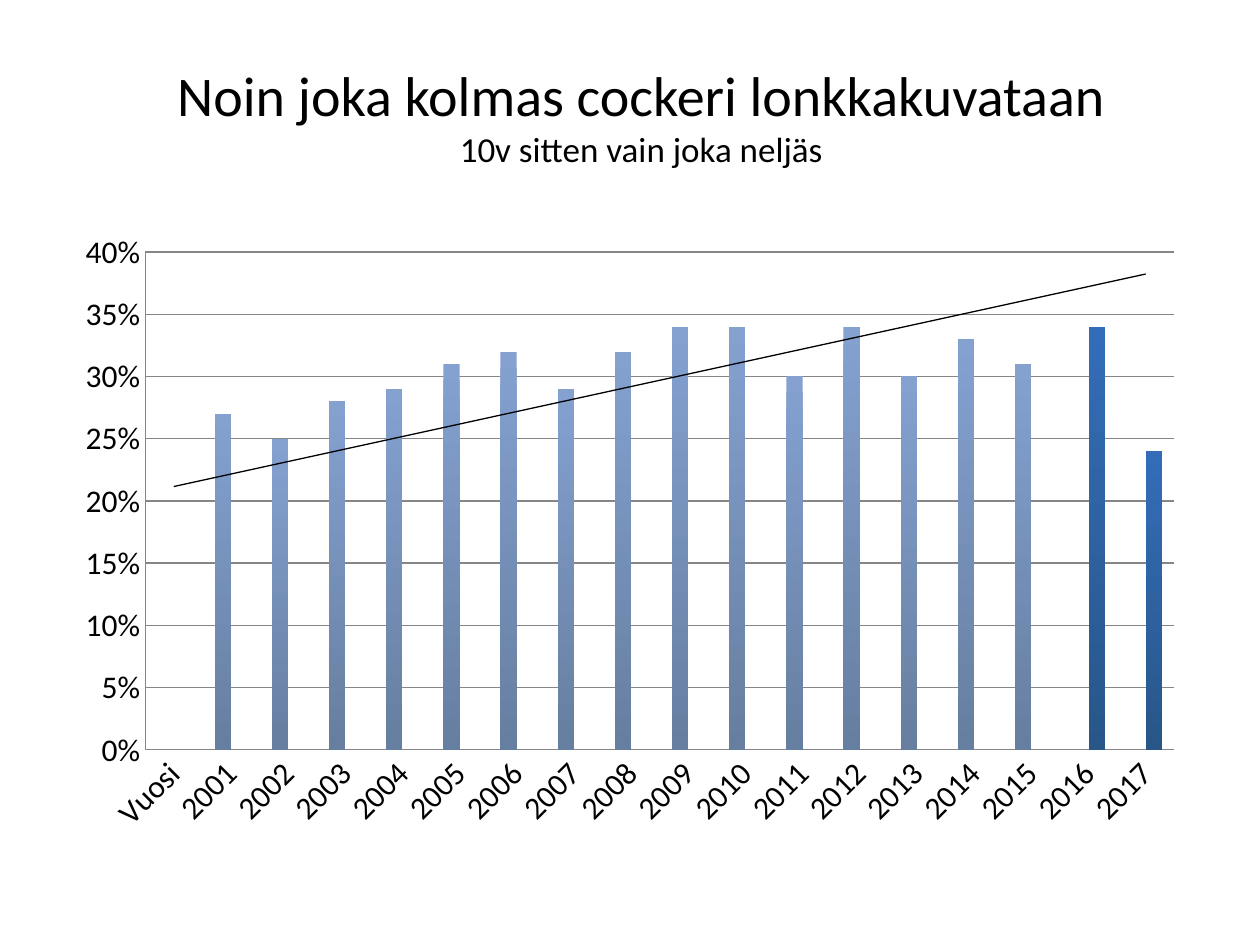
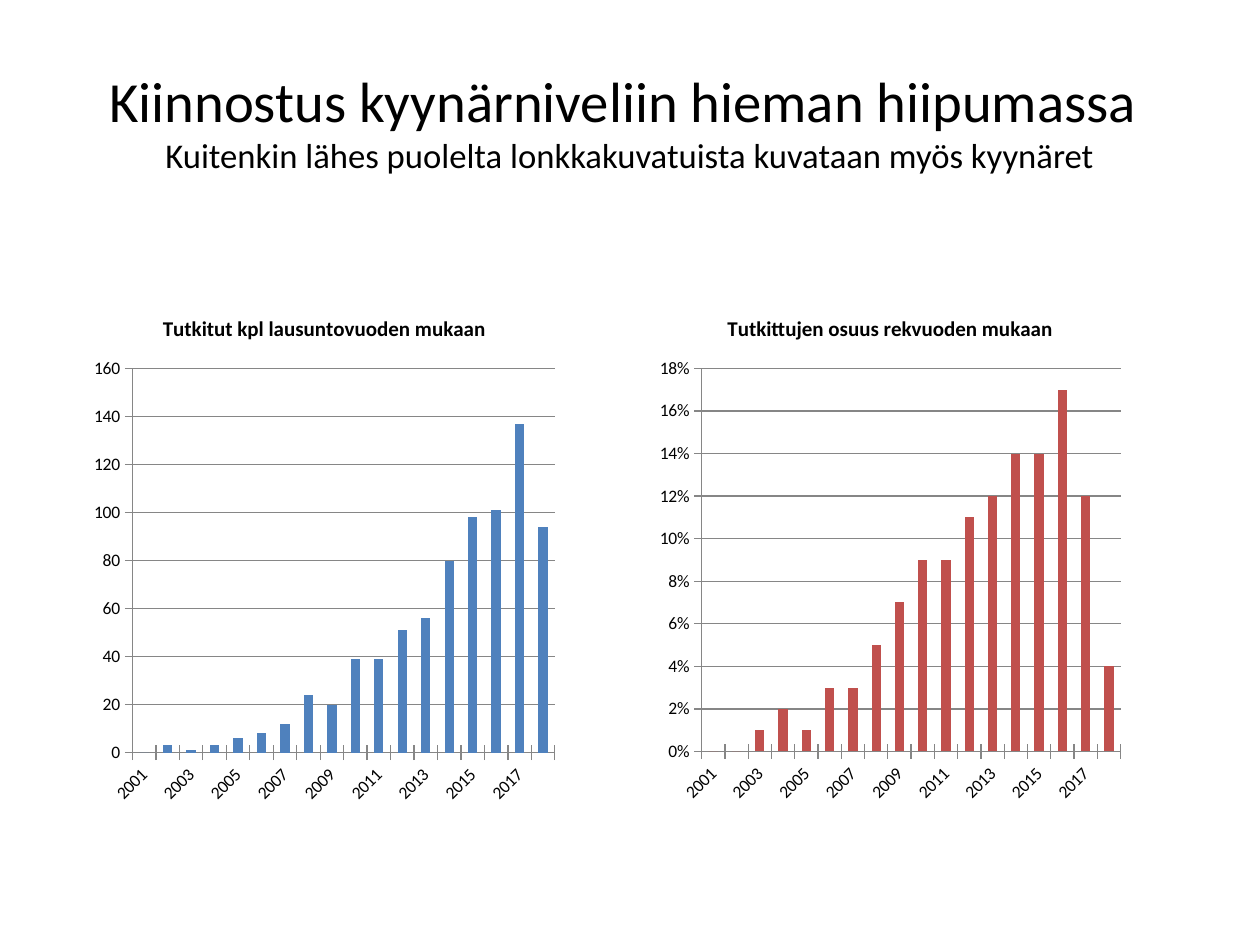
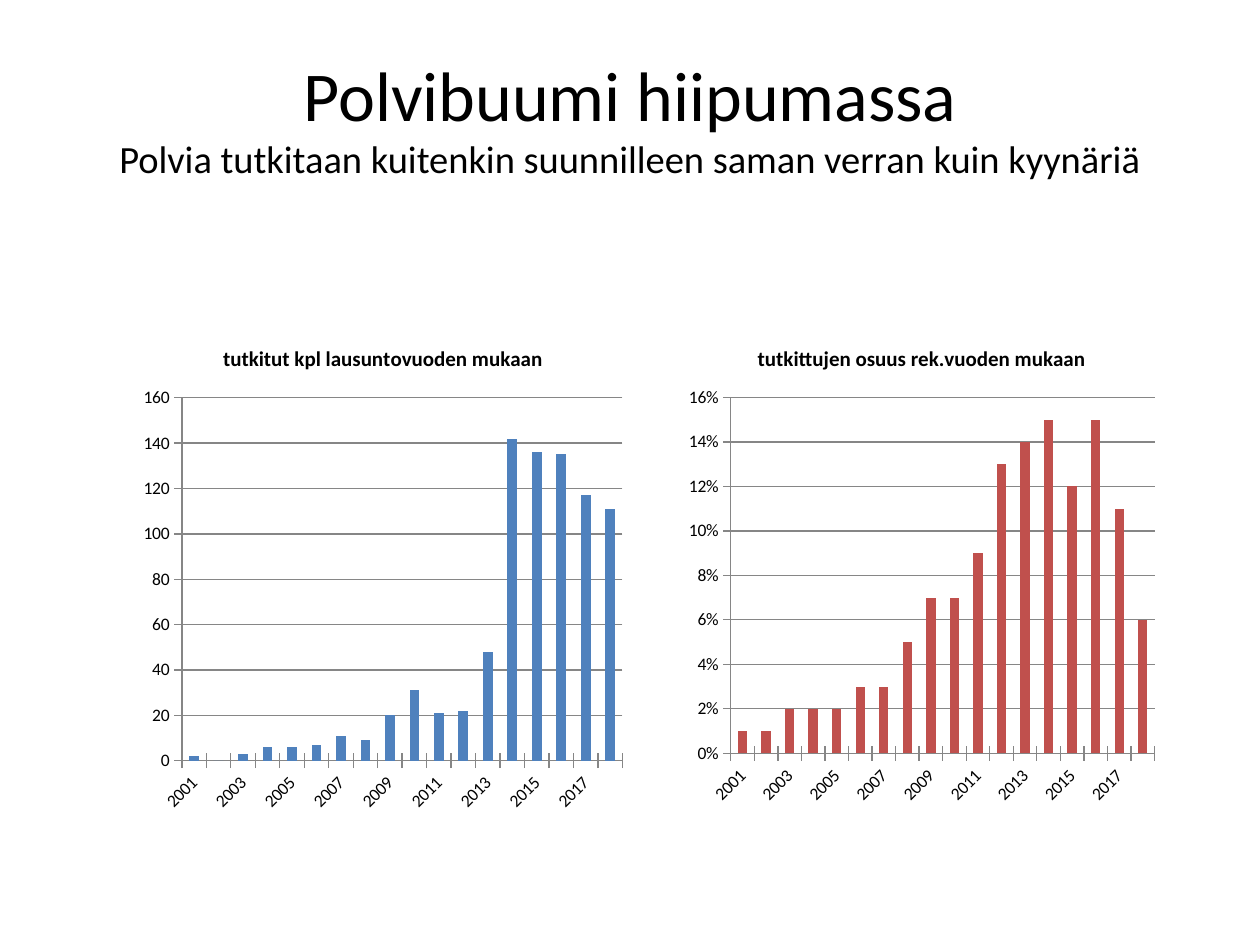
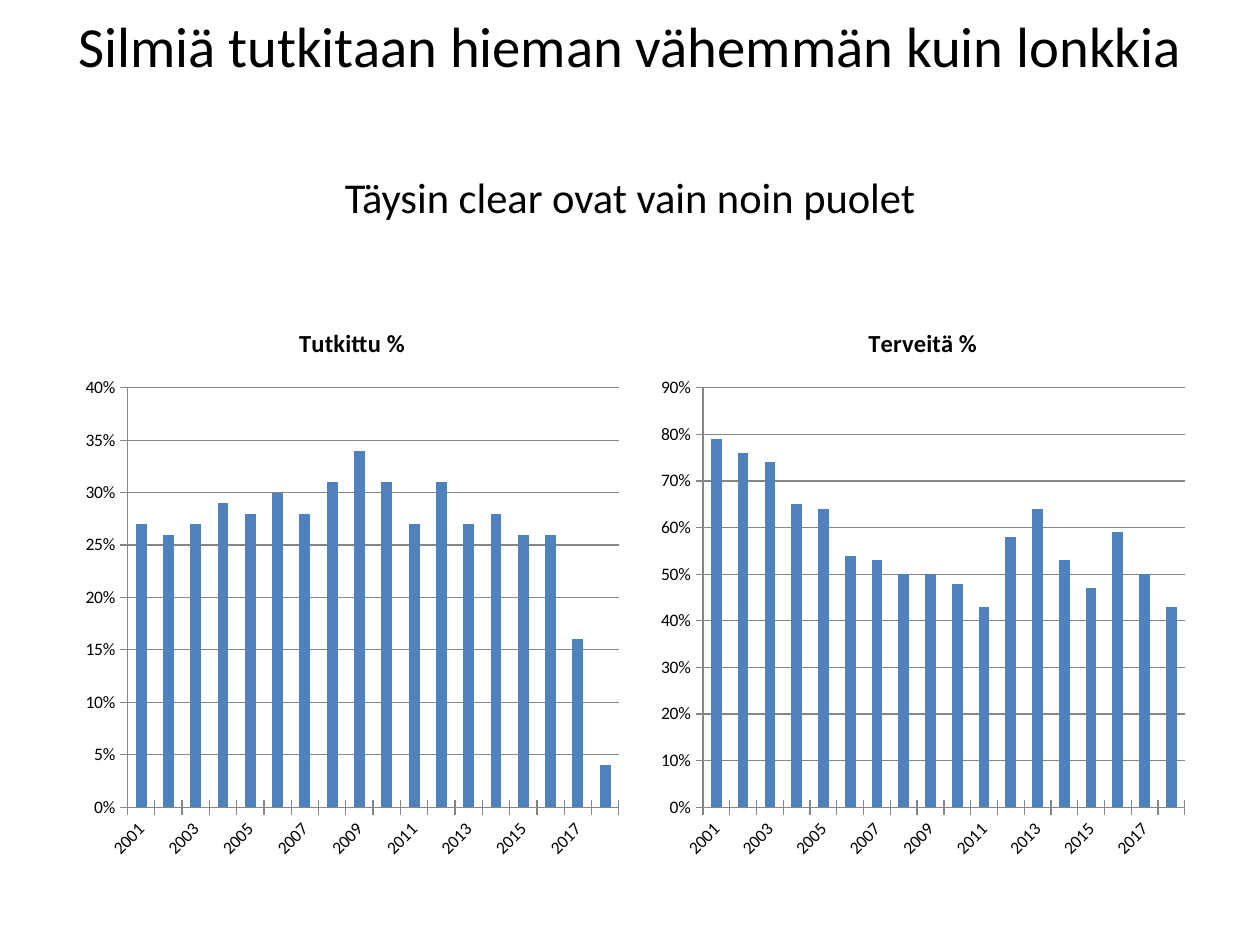
from lxml.etree import SubElement
from pptx import Presentation
from pptx.chart.data import CategoryChartData
from pptx.dml.color import RGBColor
from pptx.enum.chart import XL_CHART_TYPE, XL_TICK_MARK
from pptx.enum.text import MSO_ANCHOR, MSO_AUTO_SIZE, PP_ALIGN
from pptx.oxml import parse_xml
from pptx.oxml.ns import nsdecls
from pptx.util import Inches, Pt

FONT = "Calibri"
BLACK, GREY, BLUE, RED = "000000", "868686", "4F81BD", "C0504D"
PALE_GRADIENT = ("84A1D0", "667EA0")
DEEP_GRADIENT = ("336DB8", "285688")
YEARS = [str(year) for year in range(2001, 2019)]
PERCENT, COUNT = "0%", "General"


def color(hex_text):
    return RGBColor.from_string(hex_text)


def percents(*values):
    return [None if value is None else value / 100 for value in values]


class Deck:
    """Holds the shared style and the current slide."""

    def __init__(self):
        self.prs = Presentation()
        self.prs.slide_width, self.prs.slide_height = Inches(10), Inches(7.5)
        self.slide = None

    def style(self, font, size, bold=None):
        font.name, font.size, font.bold = FONT, Pt(size), bold
        font.color.rgb = color(BLACK)

    def add_slide(self, headline, subtitle, sizes, box=(0.5, 0.3, 9, 1.25)):
        self.slide = self.prs.slides.add_slide(self.prs.slide_layouts[5])
        title = self.slide.shapes.title
        title.left, title.top, title.width, title.height = map(Inches, box)
        frame = title.text_frame
        frame.auto_size = MSO_AUTO_SIZE.NONE
        frame.word_wrap = True
        frame.vertical_anchor = MSO_ANCHOR.MIDDLE
        paragraph = frame.paragraphs[0]
        paragraph.alignment = PP_ALIGN.CENTER
        for text, size in zip((headline, subtitle), sizes):
            if paragraph.runs:
                paragraph.add_line_break()
            run = paragraph.add_run()
            run.text = text
            self.style(run.font, size)

    def add_columns(self, box, categories, columns, number_format, size=10,
                    tick=XL_TICK_MARK.CROSS, title=None, title_size=12):
        data = CategoryChartData()
        data.categories = categories
        for number, (values, _) in enumerate(columns, 1):
            data.add_series(f"Series {number}", values)
        chart = self.slide.shapes.add_chart(
            XL_CHART_TYPE.COLUMN_CLUSTERED, *map(Inches, box), data).chart
        self.style(chart.font, size)
        chart.has_legend = False
        chart.has_title = title is not None
        if title:
            chart.chart_title.include_in_layout = False
            chart.chart_title.text_frame.text = title
            heading = chart.chart_title.text_frame.paragraphs[0]
            self.style(heading.font, title_size, True)
            self.style(heading.runs[0].font, title_size, True)

        plot = chart.plots[0]
        plot.vary_by_categories = False
        plot.gap_width, plot.overlap = 150, 0
        for series, (_, fill) in zip(plot.series, columns):
            self.fill_series(series, fill)

        for axis in (chart.category_axis, chart.value_axis):
            axis.major_tick_mark = tick
            axis.minor_tick_mark = XL_TICK_MARK.NONE
            axis.format.line.color.rgb = color(GREY)
            self.style(axis.tick_labels.font, size)
        chart.value_axis.major_gridlines.format.line.color.rgb = color(GREY)
        labels = chart.value_axis.tick_labels
        labels.number_format, labels.number_format_is_linked = number_format, False
        chart.element.xpath(".//c:catAx/c:txPr/a:bodyPr")[0].set("rot", "-2700000")
        return chart

    def fill_series(self, series, fill):
        series.invert_if_negative = False
        if isinstance(fill, str):
            series.format.fill.solid()
            series.format.fill.fore_color.rgb = color(fill)
            return
        series.format.fill.gradient()
        series.format.fill.gradient_angle = 270
        for stop, shade in zip(series.format.fill.gradient_stops, fill):
            stop.color.rgb = color(shade)

    def add_trend(self, series):
        trend = parse_xml(
            f'<c:trendline {nsdecls("c", "a")}><c:spPr><a:ln w="9525"><a:solidFill>'
            f'<a:srgbClr val="{BLACK}"/></a:solidFill></a:ln></c:spPr></c:trendline>')
        namespace = trend.nsmap["c"]
        for tag, value in (("trendlineType", "linear"), ("dispRSqr", "0"), ("dispEq", "0")):
            SubElement(trend, f"{{{namespace}}}{tag}").set("val", value)
        series.format.line.fill.background()
        series._element.xpath("c:cat")[0].addprevious(trend)


def add_hips(deck):
    deck.add_slide("Noin joka kolmas cockeri lonkkakuvataan",
                   "10v sitten vain joka neljäs", (32, 20), (0.59, 0.29, 9, 1.25))
    earlier = percents(0, 27, 25, 28, 29, 31, 32, 29, 32, 34, 34, 30, 34, 30, 33, 31,
                       None, None)
    latest = percents(0, *[None] * 15, 34, 24)
    chart = deck.add_columns((0.5, 1.75, 9, 4.95), ["Vuosi"] + YEARS[:-1],
                             [(earlier, PALE_GRADIENT), (latest, DEEP_GRADIENT)],
                             PERCENT, size=18, tick=XL_TICK_MARK.NONE)
    deck.add_trend(chart.plots[0].series[0])


def add_elbows(deck):
    deck.add_slide("Kiinnostus kyynärniveliin hieman hiipumassa ",
                   "Kuitenkin lähes puolelta lonkkakuvatuista kuvataan myös kyynäret",
                   (32.4, 19.8), (0.5, 0.3, 8.99, 1.32))
    examined = [0, 3, 1, 3, 6, 8, 12, 24, 20, 39, 39, 51, 56, 80, 98, 101, 137, 94]
    share = percents(0, 0, 1, 2, 1, 3, 3, 5, 7, 9, 9, 11, 12, 14, 14, 17, 12, 4)
    deck.add_columns((0.67, 2.33, 3.81, 4.13), YEARS, [(examined, BLUE)], COUNT,
                     title="Tutkitut kpl lausuntovuoden mukaan")
    deck.add_columns((5.16, 2.33, 3.81, 4.12), YEARS, [(share, RED)], PERCENT,
                     title="Tutkittujen osuus rekvuoden mukaan")


def add_knees(deck):
    deck.add_slide("Polvibuumi hiipumassa",
                   "Polvia tutkitaan kuitenkin suunnilleen saman verran kuin kyynäriä",
                   (40, 22))
    examined = [2, 0, 3, 6, 6, 7, 11, 9, 20, 31, 21, 22, 48, 142, 136, 135, 117, 111]
    share = percents(1, 1, 2, 2, 2, 3, 3, 5, 7, 7, 9, 13, 14, 15, 12, 15, 11, 6)
    deck.add_columns((1.06, 2.57, 3.96, 3.95), YEARS, [(examined, BLUE)], COUNT,
                     title="tutkitut kpl lausuntovuoden mukaan")
    deck.add_columns((5.39, 2.57, 3.85, 3.89), YEARS, [(share, RED)], PERCENT,
                     title="tutkittujen osuus rek.vuoden mukaan")


def add_eyes(deck):
    deck.add_slide("Silmiä tutkitaan hieman vähemmän kuin lonkkia ",
                   "Täysin clear ovat vain noin puolet", (32.4, 24.3))
    examined = percents(27, 26, 27, 29, 28, 30, 28, 31, 34, 31, 27, 31, 27, 28, 26, 26, 16, 4)
    healthy = percents(79, 76, 74, 65, 64, 54, 53, 50, 50, 48, 43, 58, 64, 53, 47, 59, 50, 43)
    deck.add_columns((0.59, 2.41, 4.41, 4.49), YEARS, [(examined, BLUE)], PERCENT,
                     title="Tutkittu %", title_size=14)
    deck.add_columns((5.16, 2.41, 4.33, 4.49), YEARS, [(healthy, BLUE)], PERCENT,
                     title="Terveitä %", title_size=14)


def main():
    deck = Deck()
    for add_topic in (add_hips, add_elbows, add_knees, add_eyes):
        add_topic(deck)
    deck.prs.save("out.pptx")


if __name__ == "__main__":
    main()
